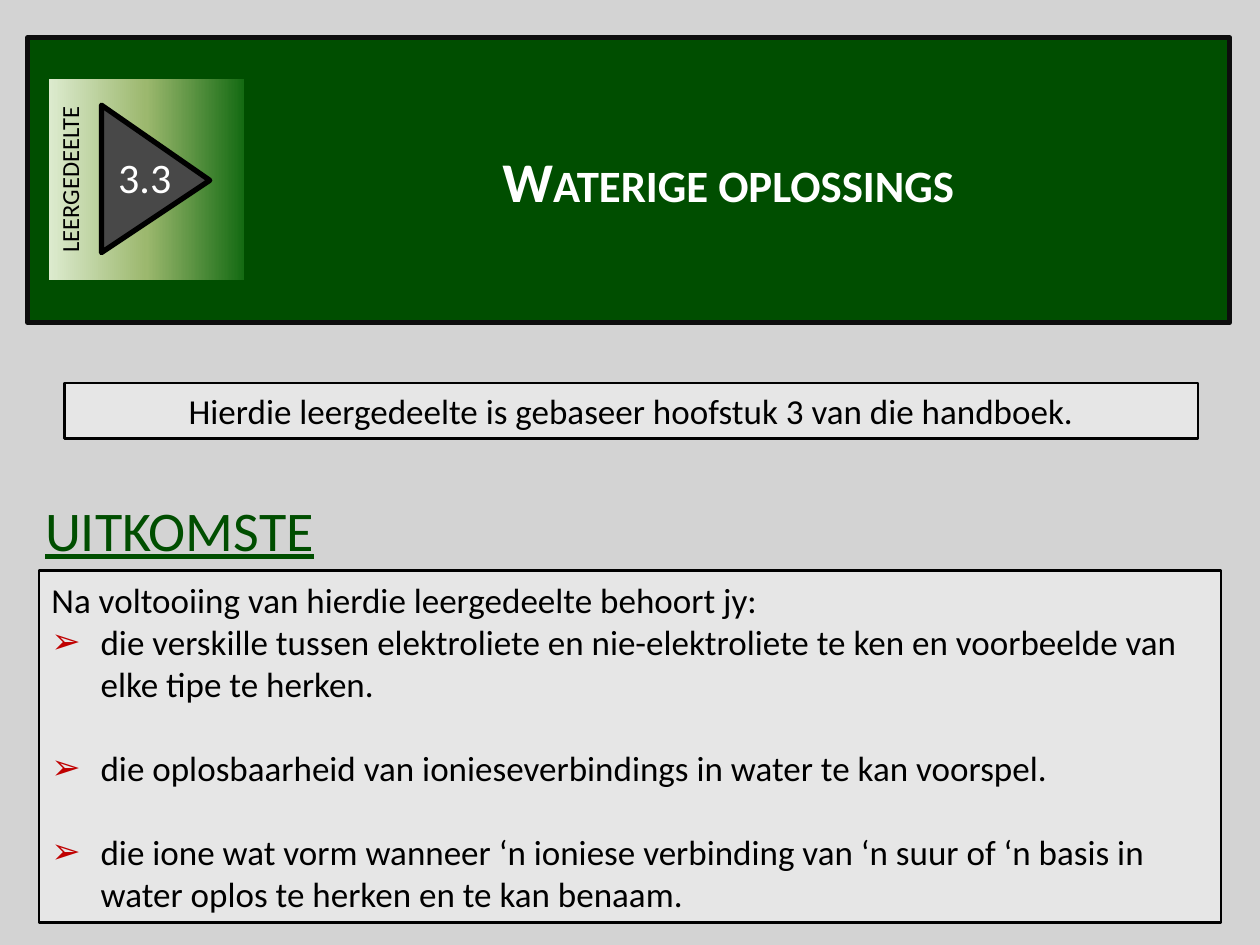
import copy
import pptx
import pptx.util
import pptx.dml.color
import pptx.enum.dml
import pptx.enum.shapes
import pptx.enum.text
import pptx.oxml
import pptx.oxml.ns

Inches = pptx.util.Inches
Pt = pptx.util.Pt
SHAPE = pptx.enum.shapes.MSO_SHAPE
ALIGN = pptx.enum.text.PP_ALIGN
ANCHOR = pptx.enum.text.MSO_ANCHOR

COLORS = {
    "background": "D3D3D3",
    "banner": "004E00",
    "banner_line": "0D0D0D",
    "panel": "E6E6E6",
    "triangle": "484848",
    "bullet": "C00000",
    "black": "000000",
    "white": "FFFFFF",
    "fade_start": "DDEBCF",
    "fade_middle": "9CB86E",
    "fade_end": "156B13",
}


def rgb(name):
    return pptx.dml.color.RGBColor.from_string(COLORS[name])


def write_text(shape, lines, color, align=ALIGN.LEFT, anchor=ANCHOR.TOP, wrap=True, **font_format):
    frame = shape.text_frame
    frame_format = {
        "word_wrap": wrap,
        "auto_size": pptx.enum.text.MSO_AUTO_SIZE.NONE,
        "vertical_anchor": anchor,
        "margin_left": Inches(0.1),
        "margin_right": Inches(0.1),
        "margin_top": Inches(0.05),
        "margin_bottom": Inches(0.05),
    }
    for name, value in frame_format.items():
        setattr(frame, name, value)
    frame.text = "\n".join(lines)
    for paragraph in frame.paragraphs:
        paragraph.alignment = align
        font = paragraph.runs[0].font
        for name, value in {"name": "Calibri", **font_format}.items():
            setattr(font, name, value)
        font.color.rgb = rgb(color)


presentation = pptx.Presentation()
presentation.slide_width = Inches(10)
presentation.slide_height = Inches(7.5)
slide = presentation.slides.add_slide(presentation.slide_layouts[5])
slide.background.fill.solid()
slide.background.fill.fore_color.rgb = rgb("background")

title = slide.shapes.title
title_place = {"left": 2.11, "top": 1.11, "width": 7.34, "height": 0.64}
for name, value in title_place.items():
    setattr(title, name, Inches(value))
write_text(title, ["Waterige oplossings"], "white", ALIGN.CENTER, ANCHOR.MIDDLE,
           size=Pt(32), bold=True)
title.text_frame.paragraphs[0].runs[0]._r.get_or_add_rPr().set("cap", "small")

badge = slide.shapes.add_group_shape()
boxes = {
    "banner": (slide, SHAPE.RECTANGLE, (0.22, 0.3, 9.54, 2.26), 0, "banner", "banner_line", 3),
    "label": (badge, SHAPE.RECTANGLE, (0.36, 0.65, 1.6, 1.55), 270, None, None, 0),
    "triangle": (badge, SHAPE.ISOSCELES_TRIANGLE, (0.65, 0.99, 1.17, 0.86), 90, "triangle", "black", 3),
    "outcomes": (slide, SHAPE.RECTANGLE, (0.31, 4.53, 9.38, 2.79), 0, "panel", "black", 1.5),
    "source": (slide, SHAPE.RECTANGLE, (0.51, 3.04, 9, 0.44), 0, "panel", "black", 1.5),
}
shapes = {}
for name, (parent, kind, place, rotation, fill, line, width) in boxes.items():
    shape = parent.shapes.add_shape(kind, *map(Inches, place))
    shape.shadow.inherit = False
    shape.rotation = rotation
    if fill:
        shape.fill.solid()
        shape.fill.fore_color.rgb = rgb(fill)
    if line:
        shape.line.color.rgb = rgb(line)
        shape.line.width = Pt(width)
    else:
        shape.line.fill.background()
    shapes[name] = shape

slide.shapes._spTree.insert(2, shapes["banner"]._element)
shapes["triangle"].adjustments[0] = 0.51

label_fill = shapes["label"].fill
label_fill.gradient()
label_fill.gradient_angle = 270
stop_list = shapes["label"]._element.spPr.find(".//" + pptx.oxml.ns.qn("a:gsLst"))
stop_list.insert(1, copy.deepcopy(stop_list[0]))
fade = [(0, "fade_start"), (0.5, "fade_middle"), (1, "fade_end")]
for stop, (position, color) in zip(label_fill.gradient_stops, fade):
    stop.position = position
    stop.color.rgb = rgb(color)
write_text(shapes["label"], ["LEERGEDEELTE"], "black", ALIGN.CENTER, size=Pt(14))

number = badge.shapes.add_textbox(*map(Inches, (0.84, 1.15, 0.63, 0.5)))
write_text(number, ["3.3"], "white", wrap=False, size=Pt(24))

heading = slide.shapes.add_textbox(*map(Inches, (0.26, 3.88, 2.67, 0.64)))
write_text(heading, ["UITKOMSTE"], "banner", size=Pt(32), underline=True)

write_text(shapes["source"], ["Hierdie leergedeelte is gebaseer hoofstuk 3 van die handboek."],
           "black", ALIGN.CENTER, ANCHOR.MIDDLE, size=Pt(20))

outcomes = [
    "Na voltooiing van hierdie leergedeelte behoort jy:",
    "die verskille tussen elektroliete en nie-elektroliete te ken en voorbeelde van elke tipe te herken.",
    "die oplosbaarheid van ionieseverbindings in water te kan voorspel.",
    "die ione wat vorm wanneer ‘n ioniese verbinding van ‘n suur of ‘n basis in water oplos te herken en te kan benaam.",
]
write_text(shapes["outcomes"], outcomes, "black", anchor=ANCHOR.MIDDLE, size=Pt(20))
namespace = pptx.oxml.ns.nsdecls("a")
for index, paragraph in enumerate(shapes["outcomes"].text_frame.paragraphs[1:]):
    paragraph.space_before = Pt(24 if index else 0)
    properties = paragraph._p.get_or_add_pPr()
    properties.set("marL", str(Inches(0.39)))
    properties.set("indent", str(-Inches(0.39)))
    for markup in (
        f'<a:buClr {namespace}><a:srgbClr val="{COLORS["bullet"]}"/></a:buClr>',
        f'<a:buFont {namespace} typeface="Calibri"/>',
        f'<a:buChar {namespace} char="➢"/>',
    ):
        properties.append(pptx.oxml.parse_xml(markup))

presentation.save("out.pptx")
